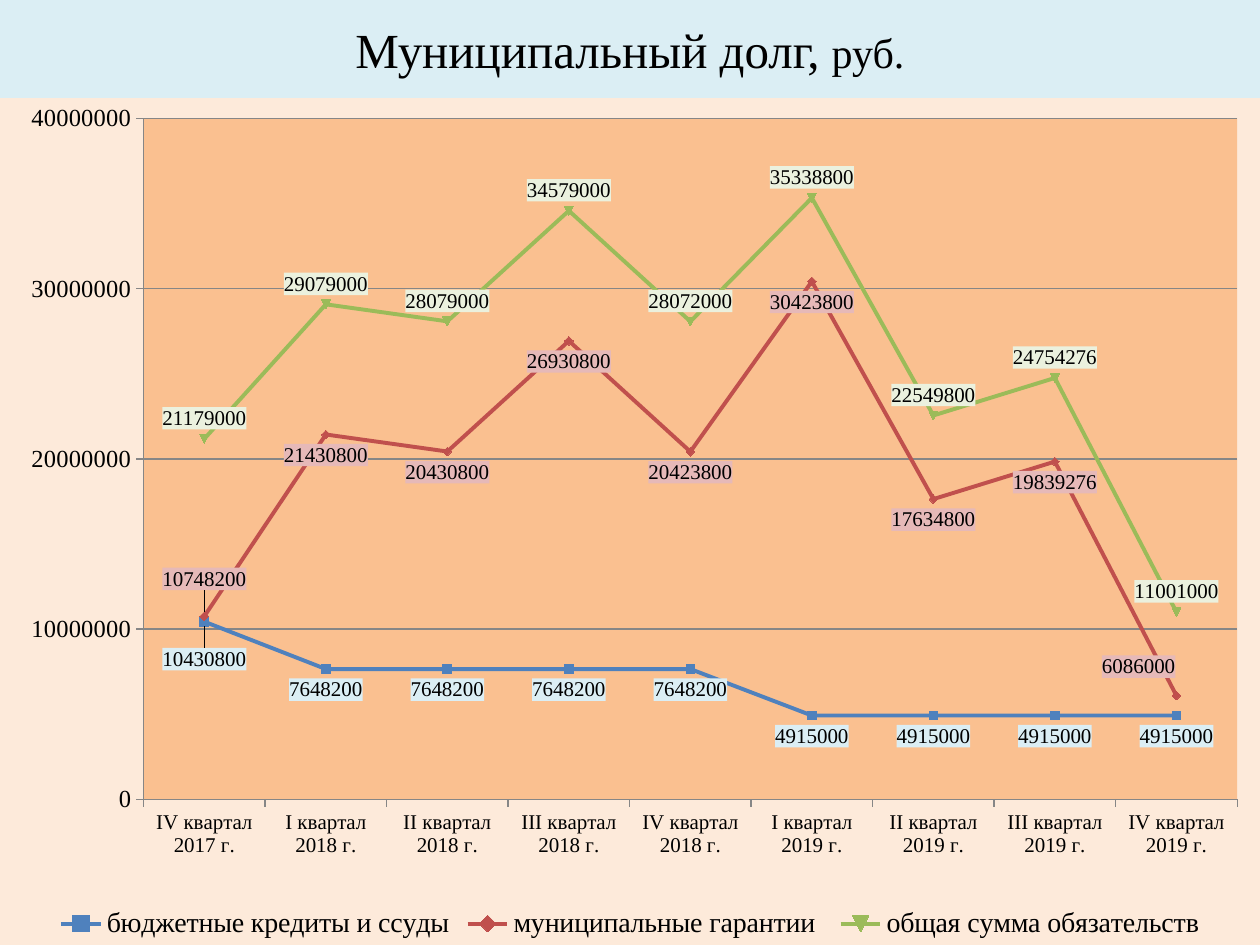
from pptx import Presentation
from pptx.chart.data import CategoryChartData
from pptx.dml.color import RGBColor
from pptx.enum.chart import XL_CHART_TYPE, XL_LABEL_POSITION, XL_LEGEND_POSITION, XL_TICK_MARK
from pptx.enum.shapes import MSO_SHAPE
from pptx.enum.text import MSO_ANCHOR, PP_ALIGN
from pptx.oxml import parse_xml
from pptx.oxml.ns import nsdecls
from pptx.util import Cm, Pt

LINE_MARKERS = XL_CHART_TYPE.LINE_MARKERS
ABOVE, BELOW = XL_LABEL_POSITION.ABOVE, XL_LABEL_POSITION.BELOW
BOTTOM = XL_LEGEND_POSITION.BOTTOM
OUTSIDE = XL_TICK_MARK.OUTSIDE
RECTANGLE = MSO_SHAPE.RECTANGLE
MIDDLE, CENTER = MSO_ANCHOR.MIDDLE, PP_ALIGN.CENTER

THEME = {
    "font": "Times New Roman", "text": "000000", "axis": "868686",
    "title_fill": "DBEEF4", "chart_fill": "FDEADA", "plot_fill": "FAC090",
    "label_size": 12, "value_size": 14, "legend_size": 16,
    "series_width": 2.25, "axis_width": 0.75,
}
WIDTH, HEIGHT, TITLE_HEIGHT = 25.4, 19.05, 1.98
PLOT = {"x": 0.114, "y": 0.024, "w": 0.868, "h": 0.804}

TITLE = [("Муниципальный долг, ", 28), ("руб.", 24)]
QUARTERS = [
    "IV квартал 2017 г.",
    *[f"{quarter} квартал {year} г." for year in (2018, 2019) for quarter in ("I", "II", "III", "IV")],
]
# "moved" maps a point to its label position and offset as fractions of the chart
SERIES = [
    {"name": "бюджетные кредиты и ссуды", "color": "4F81BD", "label_fill": "DBEEF4", "position": BELOW,
     "values": [10430800, 7648200, 7648200, 7648200, 7648200, 4915000, 4915000, 4915000, 4915000],
     "moved": {0: (BELOW, 0, 0.02)}},
    {"name": "муниципальные гарантии ", "color": "C0504D", "label_fill": "E6B9B8", "position": BELOW,
     "values": [10748200, 21430800, 20430800, 26930800, 20423800, 30423800, 17634800, 19839276, 6086000],
     "moved": {0: (ABOVE, 0, -0.02), 8: (ABOVE, -0.03, -0.01)}},
    {"name": "общая сумма обязательств", "color": "9BBB59", "label_fill": "EBF1DE", "position": ABOVE,
     "values": [21179000, 29079000, 28079000, 34579000, 28072000, 35338800, 22549800, 24754276, 11001000],
     "moved": {}},
]


def style_font(font, size):
    font.name, font.size = THEME["font"], Pt(size)
    font.color.rgb = RGBColor.from_string(THEME["text"])


def style_line(line, color, width):
    line.color.rgb = RGBColor.from_string(color)
    line.width = Pt(width)


def fill_xml(color):
    return parse_xml(
        f'<c:spPr {nsdecls("c", "a")}><a:solidFill><a:srgbClr val="{color}"/></a:solidFill>'
        "<a:ln><a:noFill/></a:ln></c:spPr>"
    )


def layout_xml(places, inner=False):
    target = '<c:layoutTarget val="inner"/>' if inner else ""
    modes = '<c:xMode val="edge"/><c:yMode val="edge"/>' if inner else ""
    sizes = "".join(f'<c:{key} val="{value}"/>' for key, value in places.items())
    return parse_xml(
        f'<c:layout {nsdecls("c")}><c:manualLayout>{target}{modes}{sizes}</c:manualLayout></c:layout>'
    )


def add_title(page):
    box = page.shapes.add_shape(RECTANGLE, 0, 0, Cm(WIDTH), Cm(TITLE_HEIGHT))
    box.shadow.inherit = False
    box.fill.solid()
    box.fill.fore_color.rgb = RGBColor.from_string(THEME["title_fill"])
    box.line.fill.background()
    box.text_frame.vertical_anchor = MIDDLE
    para = box.text_frame.paragraphs[0]
    para.alignment = CENTER
    for text, size in TITLE:
        span = para.add_run()
        span.text = text
        style_font(span.font, size)


def style_series(chart, number, series, content):
    style_line(series.format.line, content["color"], THEME["series_width"])
    series.smooth = False
    labels = series.data_labels
    labels.show_value = True
    labels.position = content["position"]
    style_font(labels.font, THEME["label_size"])
    node = f"(.//c:ser)[{number}]//c:dLbls"
    for point, (position, x, y) in content["moved"].items():
        label = series.points[point].data_label
        style_font(label.font, THEME["label_size"])
        label.position = position
        index = chart.element.xpath(f"{node}/c:dLbl/c:idx[@val='{point}']")[0]
        index.addnext(layout_xml({"x": x, "y": y}))
    for text_style in chart.element.xpath(f"{node}//c:txPr"):
        text_style.addprevious(fill_xml(content["label_fill"]))


def style_axes(chart):
    sizes = ((chart.category_axis, THEME["label_size"]), (chart.value_axis, THEME["value_size"]))
    for axis, size in sizes:
        style_font(axis.tick_labels.font, size)
        style_line(axis.format.line, THEME["axis"], THEME["axis_width"])
        axis.major_tick_mark = OUTSIDE
    value_axis = chart.value_axis
    value_axis.minimum_scale, value_axis.maximum_scale = 0, 40000000
    value_axis.major_unit = 10000000
    value_axis.has_major_gridlines = True
    style_line(value_axis.major_gridlines.format.line, THEME["axis"], THEME["axis_width"])


def add_debt_chart(page):
    content = CategoryChartData()
    content.categories = QUARTERS
    for item in SERIES:
        content.add_series(item["name"], item["values"])
    chart = page.shapes.add_chart(
        LINE_MARKERS, 0, Cm(TITLE_HEIGHT), Cm(WIDTH), Cm(HEIGHT - TITLE_HEIGHT), content
    ).chart
    chart.has_title = False
    chart.plots[0].vary_by_categories = False
    style_font(chart.font, THEME["label_size"])
    chart.has_legend = True
    chart.legend.position = BOTTOM
    chart.legend.include_in_layout = False
    style_font(chart.legend.font, THEME["legend_size"])
    style_axes(chart)
    for number, (series, item) in enumerate(zip(chart.plots[0].series, SERIES), 1):
        style_series(chart, number, series, item)
    plot_area = chart.element.xpath("c:chart/c:plotArea")[0]
    for layout in plot_area.xpath("c:layout"):
        plot_area.remove(layout)
    plot_area.insert(0, layout_xml(PLOT, inner=True))
    plot_area.append(fill_xml(THEME["plot_fill"]))
    chart.element.xpath("c:chart")[0].addnext(fill_xml(THEME["chart_fill"]))


def main():
    """Build the municipal debt slide."""
    deck = Presentation()
    deck.slide_width, deck.slide_height = Cm(WIDTH), Cm(HEIGHT)
    page = deck.slides.add_slide(deck.slide_layouts[6])
    add_title(page)
    add_debt_chart(page)
    deck.save("out.pptx")


if __name__ == "__main__":
    main()
